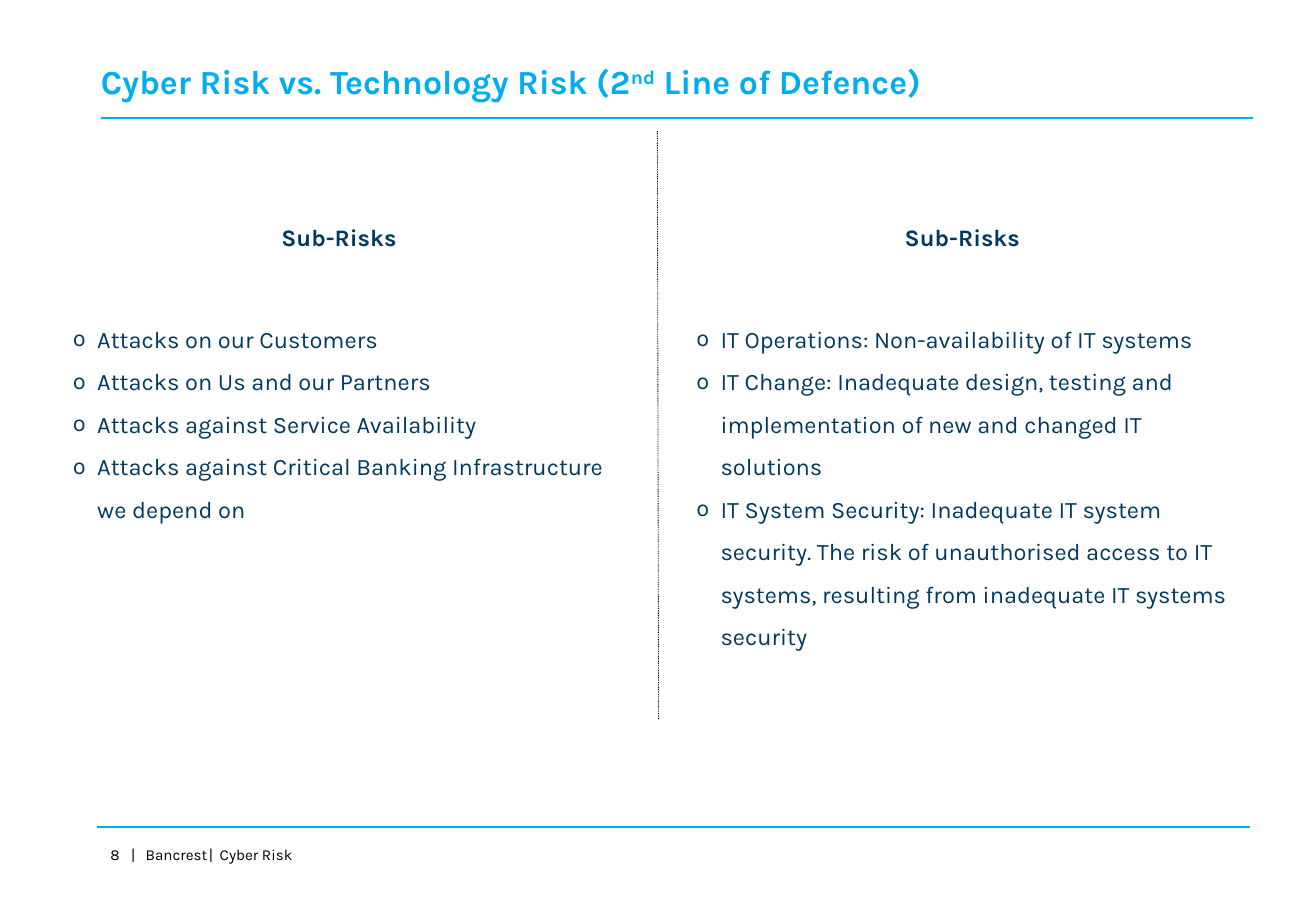
from lxml.etree import SubElement
from pptx import Presentation
from pptx.dml.color import RGBColor
from pptx.enum.dml import MSO_LINE
from pptx.enum.shapes import MSO_CONNECTOR
from pptx.enum.text import MSO_ANCHOR, PP_ALIGN
from pptx.oxml.ns import qn
from pptx.util import Inches, Pt

TITLE = [("Cyber Risk vs. Technology Risk (2", False), ("nd", True), (" Line of Defence)", False)]
TITLE_BOX = (0.83, 0.5, 9.55, 0.34)

COLUMNS = [
    ("Sub-Risks", [
        "Attacks on our Customers",
        "Attacks on Us and our Partners",
        "Attacks against Service Availability",
        "Attacks against Critical Banking Infrastructure we depend on",
    ]),
    ("Sub-Risks", [
        "IT Operations: Non-availability of IT systems",
        "IT Change: Inadequate design, testing and implementation of new and changed IT solutions",
        "IT System Security: Inadequate IT system security. The risk of unauthorised access to IT "
        "systems, resulting from inadequate IT systems security",
    ]),
]
COLUMN_LEFT, COLUMN_TOP, COLUMN_PITCH = 0.6, 1.72, 5.13
COLUMN_WIDTH, COLUMN_HEIGHT = 4.38, 3.65
BULLET_INDENT = 0.2

FOOTER = ["8", "|", "Bancrest", "|", "Cyber Risk"]
FOOTER_TABS = [0.17, 0.29, 0.81, 0.9]
FOOTER_BOX = (0.81, 6.91, 6.82, 0.25)

THEME = {
    "font": "Karla",
    "accent": RGBColor(0x00, 0xAE, 0xEF),
    "body": RGBColor(0x00, 0x39, 0x5C),
    "black": RGBColor(0x00, 0x00, 0x00),
    "title_size": Pt(20),
    "body_size": Pt(14),
    "footer_size": Pt(9),
}

RULES = [
    ((0.8, 6.81, 10.29, 6.81), "accent", {"width": Pt(1)}),
    ((5.41, 1.08, 5.42, 5.92), "black", {"width": Pt(0.5), "dash_style": MSO_LINE.ROUND_DOT}),
    ((0.83, 0.97, 10.31, 0.97), "accent", {"width": Pt(1)}),
]


def apply(target, values):
    for name, value in values.items():
        setattr(target, name, value)


def style(font, size, color, bold=False):
    apply(font, {"name": THEME["font"], "size": THEME[size], "bold": bold})
    font.color.rgb = THEME[color]


def add_text(slide, box, **frame_values):
    frame = slide.shapes.add_textbox(*map(Inches, box)).text_frame
    apply(frame, {"word_wrap": True, **frame_values})
    return frame


def add_rule(slide, ends, color, line_values):
    rule = slide.shapes.add_connector(MSO_CONNECTOR.STRAIGHT, *map(Inches, ends))
    rule.line.color.rgb = THEME[color]
    apply(rule.line, line_values)
    SubElement(rule._element.spPr, qn("a:effectLst"))


def add_title(slide):
    frame = add_text(slide, TITLE_BOX, vertical_anchor=MSO_ANCHOR.MIDDLE, **NO_INSETS)
    for words, raised in TITLE:
        part = frame.paragraphs[0].add_run()
        part.text = words
        style(part.font, "title_size", "accent", True)
        if raised:
            part._r.get_or_add_rPr().set("baseline", "30000")


def add_column(slide, index, heading, risks):
    left = COLUMN_LEFT + index * COLUMN_PITCH
    frame = add_text(slide, (left, COLUMN_TOP, COLUMN_WIDTH, COLUMN_HEIGHT), **NO_INSETS)
    title = frame.paragraphs[0]
    title.text = heading
    apply(title, {"alignment": PP_ALIGN.CENTER, "line_spacing": 1.5})
    style(title.runs[0].font, "body_size", "body", True)
    for position, risk in enumerate(risks):
        item = frame.add_paragraph()
        item.text = risk
        apply(item, {"line_spacing": 1.5, "space_before": Pt(0 if position else 35)})
        properties = item._p.get_or_add_pPr()
        properties.set("marL", str(Inches(BULLET_INDENT)))
        properties.set("indent", str(-Inches(BULLET_INDENT)))
        SubElement(properties, qn("a:buFont"), typeface=THEME["font"])
        SubElement(properties, qn("a:buChar"), char="o")
        style(item.runs[0].font, "body_size", "body")


def add_footer(slide):
    footer = add_text(slide, FOOTER_BOX).paragraphs[0]
    footer.text = "\t".join(FOOTER)
    tabs = SubElement(footer._p.get_or_add_pPr(), qn("a:tabLst"))
    for stop in FOOTER_TABS:
        SubElement(tabs, qn("a:tab"), pos=str(Inches(stop)), algn="l")
    for part in footer.runs:
        style(part.font, "footer_size", "black")


NO_INSETS = dict.fromkeys(("margin_left", "margin_top", "margin_right", "margin_bottom"), 0)


def main():
    deck = Presentation()
    apply(deck, {"slide_width": Inches(10.83), "slide_height": Inches(7.5)})
    slide = deck.slides.add_slide(deck.slide_layouts[6])
    for rule in RULES:
        add_rule(slide, *rule)
    add_title(slide)
    for index, (heading, risks) in enumerate(COLUMNS):
        add_column(slide, index, heading, risks)
    add_footer(slide)
    deck.save("out.pptx")


if __name__ == "__main__":
    main()
